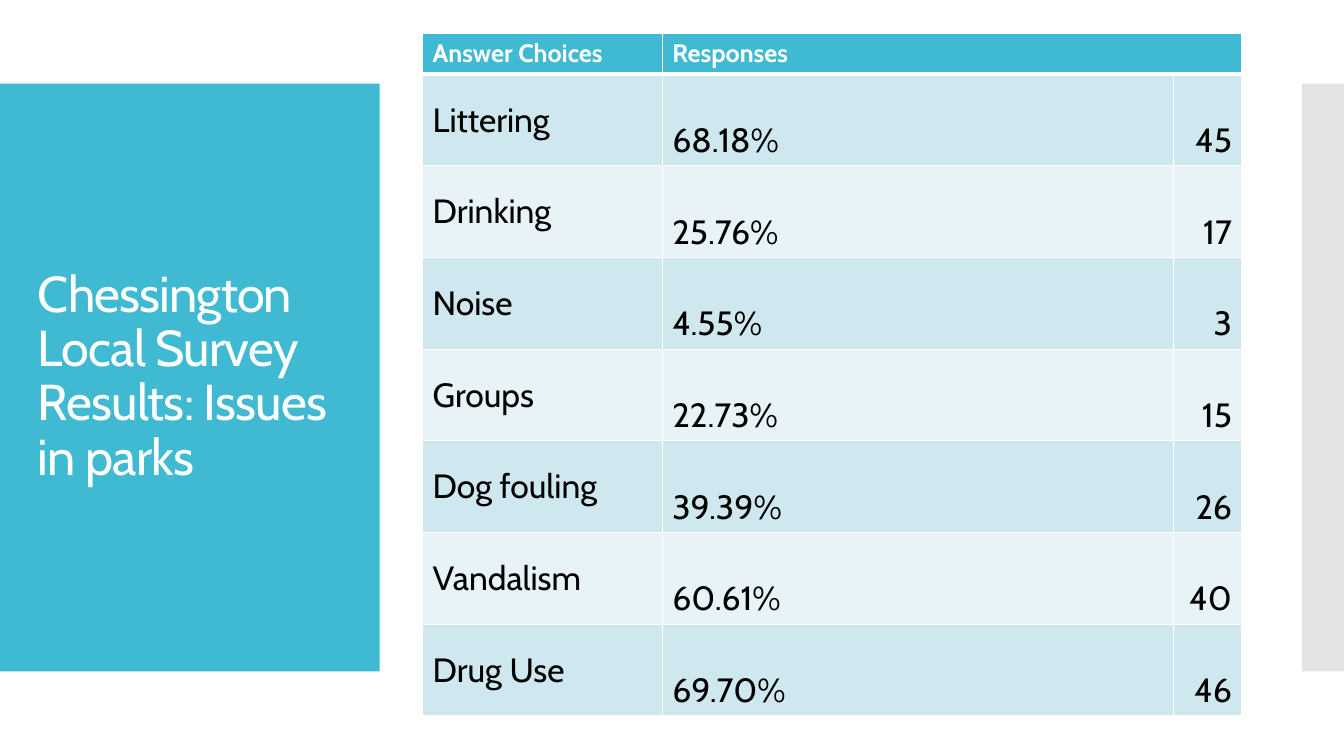
from lxml.etree import SubElement
from pptx import Presentation
from pptx.dml.color import RGBColor
from pptx.enum.shapes import MSO_SHAPE
from pptx.enum.text import MSO_ANCHOR, MSO_AUTO_SIZE, PP_ALIGN
from pptx.oxml.ns import qn
from pptx.util import Cm, Pt

FONT = "Cabin"
TEAL = RGBColor(0x40, 0xBA, 0xD2)
GREY = RGBColor(0xC8, 0xC8, 0xC8)
BAND_DARK = RGBColor(0xCF, 0xE7, 0xEE)
BAND_LIGHT = RGBColor(0xE8, 0xF3, 0xF7)
WHITE = RGBColor(0xFF, 0xFF, 0xFF)
BLACK = RGBColor(0, 0, 0)

TITLE = "Chessington Local Survey Results: Issues in parks"
HEADINGS = ("Answer Choices", "Responses", "")
RESPONSES = (
    ("Littering", "68.18%", "45"),
    ("Drinking", "25.76%", "17"),
    ("Noise", "4.55%", "3"),
    ("Groups", "22.73%", "15"),
    ("Dog fouling", "39.39%", "26"),
    ("Vandalism", "60.61%", "40"),
    ("Drug Use", "69.70%", "46"),
)
COLUMN_WIDTHS = (Cm(6.04), Cm(12.88), Cm(1.73))
HEADER_HEIGHT = Cm(1.02)
ROW_HEIGHT = Cm(2.31)


def add_run(paragraph, text, size, color, bold=False):
    run = paragraph.add_run()
    run.text = text
    run.font.name = FONT
    run.font.size = Pt(size)
    run.font.bold = bold
    run.font.color.rgb = color
    return run


def add_panel(slide, left, width, color, opacity=100):
    panel = slide.shapes.add_shape(
        MSO_SHAPE.RECTANGLE, left, Cm(2.11), width, Cm(14.81))
    panel.shadow.inherit = False
    panel.fill.solid()
    panel.fill.fore_color.rgb = color
    panel.line.fill.background()
    if opacity < 100:
        rgb = panel.element.spPr.find(".//" + qn("a:srgbClr"))
        SubElement(rgb, qn("a:alpha"), val=str(opacity * 1000))


def format_title(slide):
    title = slide.shapes.title
    title.left, title.top = Cm(0.7), Cm(3.12)
    title.width, title.height = Cm(8.18), Cm(12.78)
    frame = title.text_frame
    frame.word_wrap = True
    frame.auto_size = MSO_AUTO_SIZE.NONE
    frame.vertical_anchor = MSO_ANCHOR.MIDDLE
    paragraph = frame.paragraphs[0]
    paragraph.alignment = PP_ALIGN.LEFT
    paragraph.line_spacing = 0.9
    run = add_run(paragraph, TITLE, 36, WHITE)
    run.font._element.set("spc", "-60")
    # Bring the title in front of the teal panel
    title.element.getparent().append(title.element)


def set_borders(cell, top, bottom):
    properties = cell._tc.get_or_add_tcPr()
    for side, points in (("L", 1), ("R", 1), ("T", top), ("B", bottom)):
        line = SubElement(properties, qn("a:ln" + side), w=str(Pt(points)))
        fill = SubElement(line, qn("a:solidFill"))
        SubElement(fill, qn("a:srgbClr"), val=str(WHITE))


def fill_cell(cell, row, column, text):
    header = row == 0
    set_borders(cell, top=3 if row == 1 else 1, bottom=3 if header else 1)
    cell.fill.solid()
    if header:
        cell.fill.fore_color.rgb = TEAL
    else:
        cell.fill.fore_color.rgb = BAND_DARK if row % 2 else BAND_LIGHT
    # Figures sit at the foot of their row, labels in the middle
    figure = not header and column > 0
    cell.vertical_anchor = MSO_ANCHOR.BOTTOM if figure else MSO_ANCHOR.MIDDLE
    paragraph = cell.text_frame.paragraphs[0]
    paragraph.alignment = PP_ALIGN.RIGHT if column == 2 else PP_ALIGN.LEFT
    if text:
        add_run(paragraph, text, 18 if header else 24,
                WHITE if header else BLACK, bold=header)


def add_results_table(slide):
    rows = (HEADINGS,) + RESPONSES
    height = HEADER_HEIGHT + ROW_HEIGHT * len(RESPONSES)
    table = slide.shapes.add_table(
        len(rows), len(COLUMN_WIDTHS), Cm(10.65), Cm(0.84),
        sum(COLUMN_WIDTHS), height).table
    for column, width in zip(table.columns, COLUMN_WIDTHS):
        column.width = width
    for row, texts in enumerate(rows):
        table.rows[row].height = ROW_HEIGHT if row else HEADER_HEIGHT
        for column, text in enumerate(texts):
            fill_cell(table.cell(row, column), row, column, text)
    table.cell(0, 1).merge(table.cell(0, 2))


def main():
    presentation = Presentation()
    presentation.slide_width = Cm(33.87)
    presentation.slide_height = Cm(19.05)
    slide = presentation.slides.add_slide(presentation.slide_layouts[5])

    # Side panels
    add_panel(slide, Cm(0), Cm(9.57), TEAL)
    add_panel(slide, Cm(32.81), Cm(1.06), GREY, opacity=50)

    # Title and survey results
    format_title(slide)
    add_results_table(slide)

    presentation.save("out.pptx")


if __name__ == "__main__":
    main()
